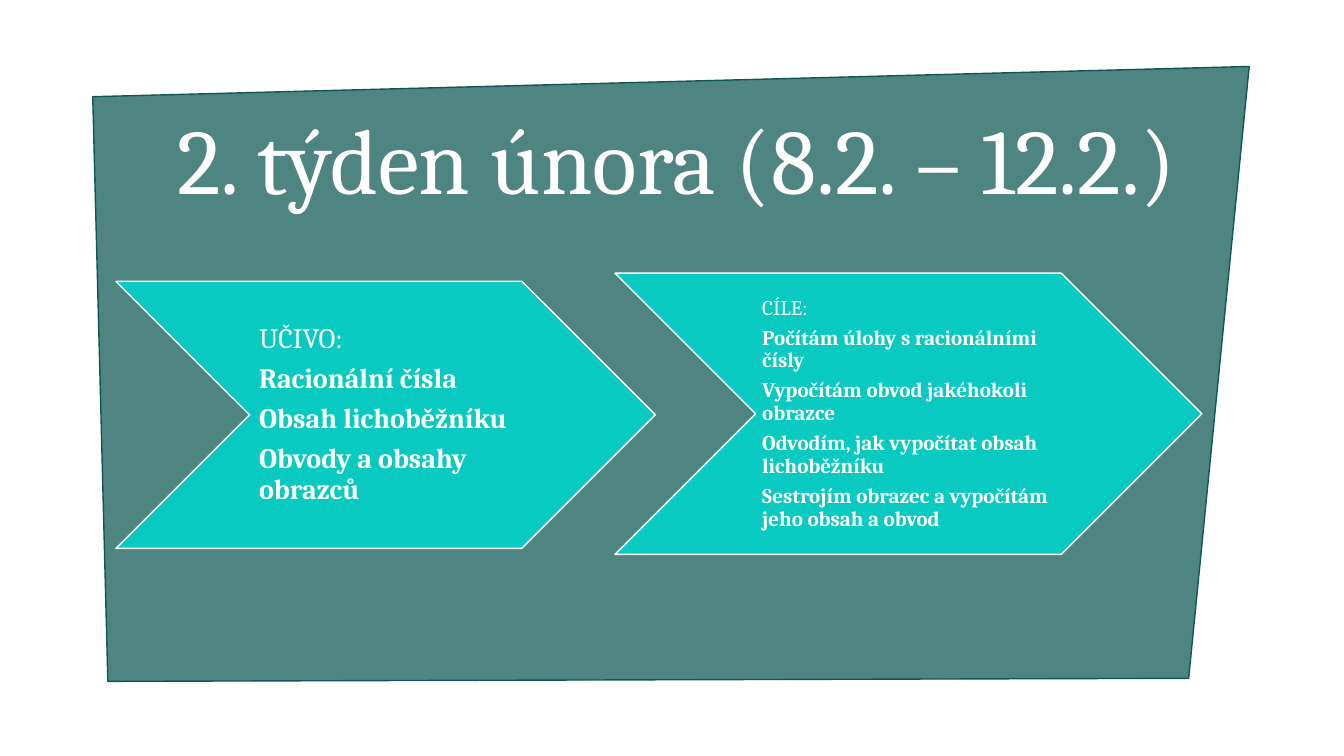
from lxml.etree import SubElement
from pptx import Presentation
from pptx.dml.color import RGBColor
from pptx.enum.shapes import MSO_SHAPE
from pptx.enum.text import MSO_ANCHOR, MSO_AUTO_SIZE, PP_ALIGN
from pptx.oxml.ns import qn
from pptx.util import Pt

SCALE = 9144  # EMU in one px, at 100 px to the inch
COLORS = {"panel": "0F5851", "arrow": "08CAC1", "light": "FFFFFF"}
PANEL = [(107, 676), (92, 96), (1239, 66), (1179, 673)]
ARROWS = [
    {"box": (115, 279, 535, 265), "text": (248, 279, 270, 265),
     "size": 20, "pad": (9, 3),
     "lines": ["UČIVO:", "Racionální čísla", "Obsah lichoběžníku",
               "Obvody a obsahy obrazců"]},
    {"box": (610, 271, 582, 279), "text": (749, 271, 303, 279),
     "size": 15, "pad": (7, 2),
     "lines": ["CÍLE:", "Počítám úlohy s racionálními čísly",
               "Vypočítám obvod jakéhokoli obrazce",
               "Odvodím, jak vypočítat obsah lichoběžníku",
               "Sestrojím obrazec a vypočítám jeho obsah a obvod"]},
]


def apply(item, values):
    for name, value in values.items():
        setattr(item, name, value)


def color(name):
    return RGBColor.from_string(COLORS[name])


class Deck:
    font = "Cambria"

    def __init__(self, width, height):
        self.file = Presentation()
        apply(self.file, {"slide_width": width * SCALE,
                          "slide_height": height * SCALE})
        self.slide = self.file.slides.add_slide(self.file.slide_layouts[5])
        self.shapes = self.slide.shapes

    def paint(self, shape, fill, line):
        shape.shadow.inherit = False
        shape.fill.solid()
        shape.fill.fore_color.rgb = color(fill)
        shape.line.color.rgb = color(line)
        shape.line.width = Pt(1)

    def panel(self, points, fill, alpha):
        """Draw a closed outline with alpha percent opacity."""
        pen = self.shapes.build_freeform(*points[0], scale=SCALE)
        pen.add_line_segments(points[1:], close=True)
        shape = pen.convert_to_shape()
        self.paint(shape, fill, fill)
        tint = shape._element.spPr.find(qn("a:solidFill"))[0]
        SubElement(tint, qn("a:alpha"), val=str(alpha * 1000))

    def arrow(self, box):
        shape = self.shapes.add_shape(
            MSO_SHAPE.CHEVRON, *(n * SCALE for n in box))
        self.paint(shape, "arrow", "light")

    def line(self, para, text, size, **extra):
        para.text = text
        apply(para, {"line_spacing": 0.9, "space_before": Pt(0), **extra})
        apply(para.font, {"name": self.font, "size": Pt(size)})
        para.font.color.rgb = color("light")

    def title(self, text, box, size):
        shape = self.shapes.title
        self.shapes._spTree.append(shape._element)  # bring to front
        apply(shape, dict(zip(("left", "top", "width", "height"),
                              (n * SCALE for n in box))))
        apply(shape.text_frame, {"vertical_anchor": MSO_ANCHOR.BOTTOM,
                                 "word_wrap": True,
                                 "auto_size": MSO_AUTO_SIZE.NONE})
        self.line(shape.text_frame.paragraphs[0], text, size,
                  alignment=PP_ALIGN.CENTER)

    def label(self, lines, box, size, pad):
        """Set a plain heading line followed by bold lines."""
        frame = self.shapes.add_textbox(*(n * SCALE for n in box)).text_frame
        left, rest = (n * SCALE for n in pad)
        apply(frame, {"word_wrap": True, "vertical_anchor": MSO_ANCHOR.MIDDLE,
                      "margin_left": left, "margin_right": rest,
                      "margin_top": rest, "margin_bottom": rest})
        for i, text in enumerate(lines):
            para = frame.add_paragraph() if i else frame.paragraphs[0]
            self.line(para, text, size, space_after=Pt(size * 0.35))
            para.font.bold = i > 0


def main():
    deck = Deck(1333, 750)
    deck.panel(PANEL, "panel", 73)
    deck.title("2. týden února (8.2. – 12.2.)", (100, 100, 1142, 118), 66)
    for part in ARROWS:
        deck.arrow(part["box"])
        deck.label(part["lines"], part["text"], part["size"], part["pad"])
    deck.file.save("out.pptx")


if __name__ == "__main__":
    main()
